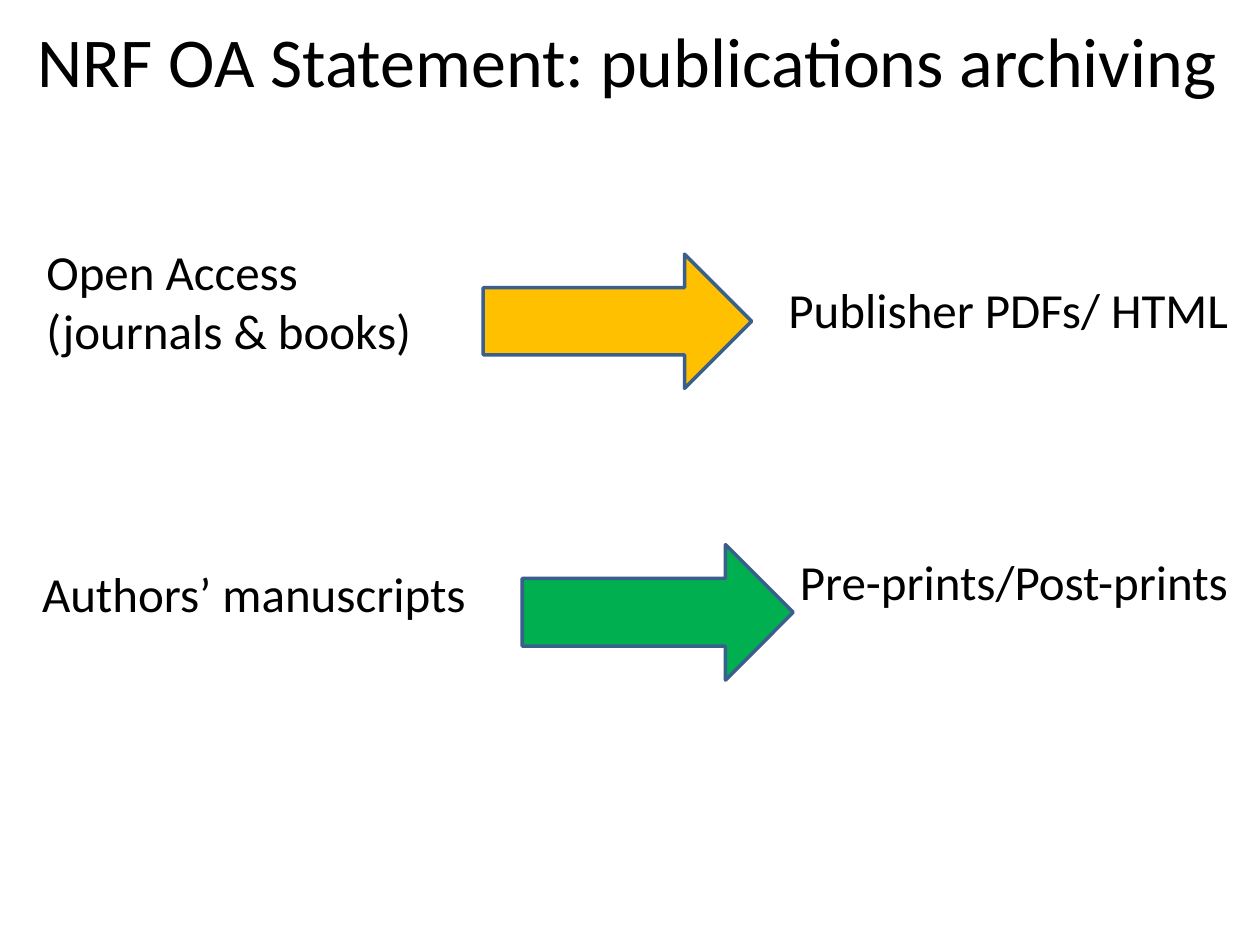
from pptx import Presentation
from pptx.dml.color import RGBColor
from pptx.enum.shapes import MSO_SHAPE
from pptx.enum.text import MSO_ANCHOR, PP_ALIGN
from pptx.util import Inches, Pt

BLACK = RGBColor(0x00, 0x00, 0x00)
GOLD = RGBColor(0xFF, 0xC0, 0x00)
GREEN = RGBColor(0x00, 0xB0, 0x50)
EDGE = RGBColor(0x3A, 0x5F, 0x8C)
LEFT, MID = PP_ALIGN.LEFT, PP_ALIGN.CENTER

# Content: left, top, width, height in inches
TITLE = "NRF OA Statement: publications archiving"
LABELS = [
    (["Open Access", "(journals & books)"], (0.27, 1.87, 3.84, 1.04), LEFT),
    (["Publisher PDFs/ HTML"], (6.16, 2.17, 3.74, 0.57), LEFT),
    (["Authors’ manuscripts"], (0, 4.42, 4.03, 0.57), MID),
    (["Pre-prints/Post-prints"], (6.25, 4.33, 3.75, 0.57), LEFT),
]
# Arrows: centre x, centre y, length, colour
ARROWS = [(4.9, 2.55, 2.13, GOLD), (5.22, 4.86, 2.15, GREEN)]


def place(shape, box):
    shape.left, shape.top, shape.width, shape.height = map(Inches, box)


def write(frame, lines, size, align):
    frame.word_wrap = True
    frame.vertical_anchor = MSO_ANCHOR.TOP
    for i, line in enumerate(lines):
        para = frame.add_paragraph() if i else frame.paragraphs[0]
        para.alignment = align
        run = para.add_run()
        run.text = line
        run.font.name = "Calibri"
        run.font.size = Pt(size)
        run.font.color.rgb = BLACK


deck = Presentation()
deck.slide_width, deck.slide_height = Inches(10), Inches(7.5)
slide = deck.slides.add_slide(deck.slide_layouts[5])

# Title
title = slide.shapes.title
place(title, (0.2, 0.09, 9.7, 0.77))
write(title.text_frame, [TITLE], 40, LEFT)

# Arrows, turned to point right
for x, y, size, fill in ARROWS:
    wide = size / 2
    arrow = slide.shapes.add_shape(MSO_SHAPE.UP_ARROW, 0, 0, 0, 0)
    place(arrow, (x - wide / 2, y - size / 2, wide, size))
    arrow.rotation = 90
    arrow.shadow.inherit = False
    arrow.fill.solid()
    arrow.fill.fore_color.rgb = fill
    arrow.line.color.rgb = EDGE
    arrow.line.width = Pt(2)

# Labels
for lines, box, align in LABELS:
    label = slide.shapes.add_textbox(0, 0, 0, 0)
    place(label, box)
    write(label.text_frame, lines, 28, align)

deck.save("out.pptx")
